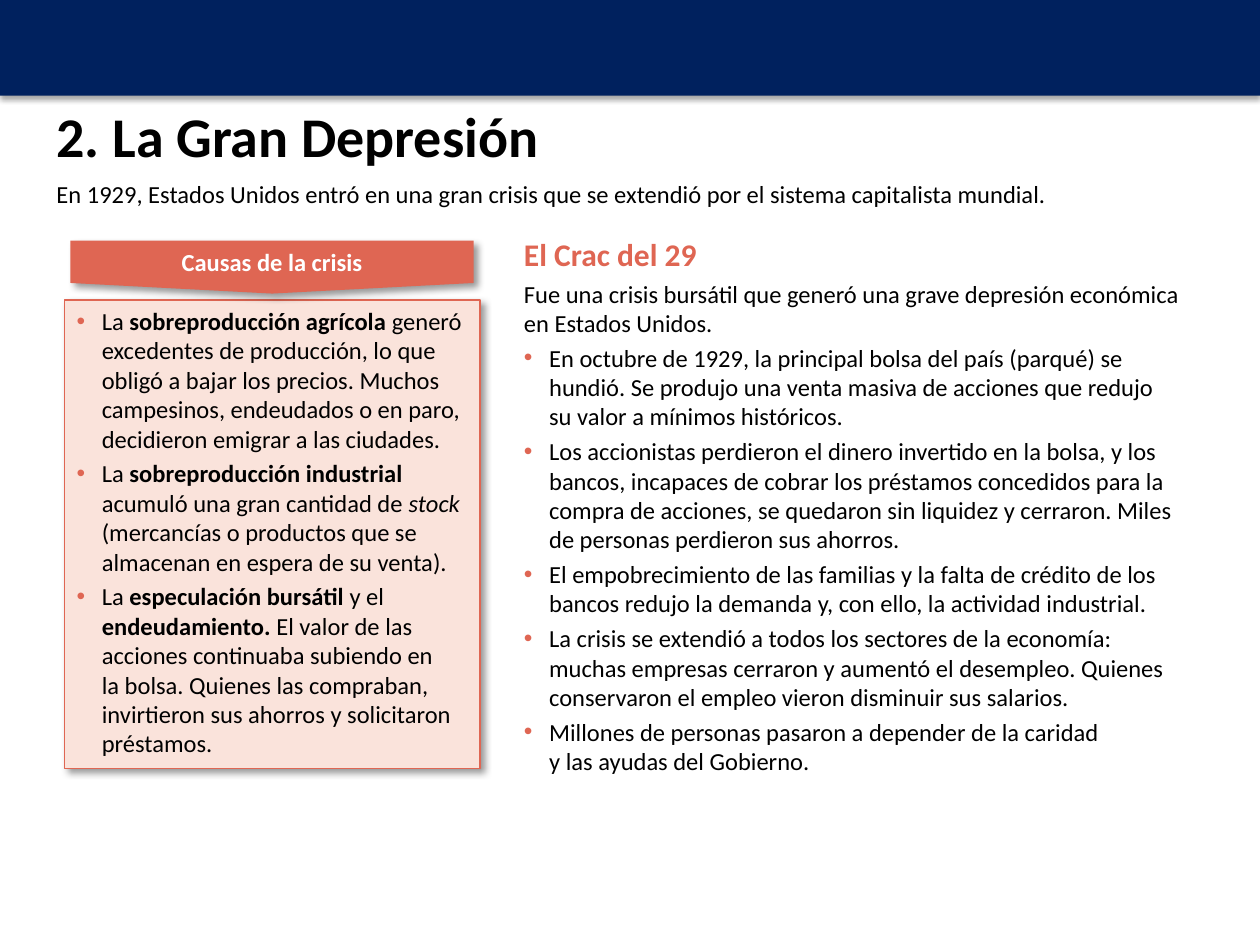
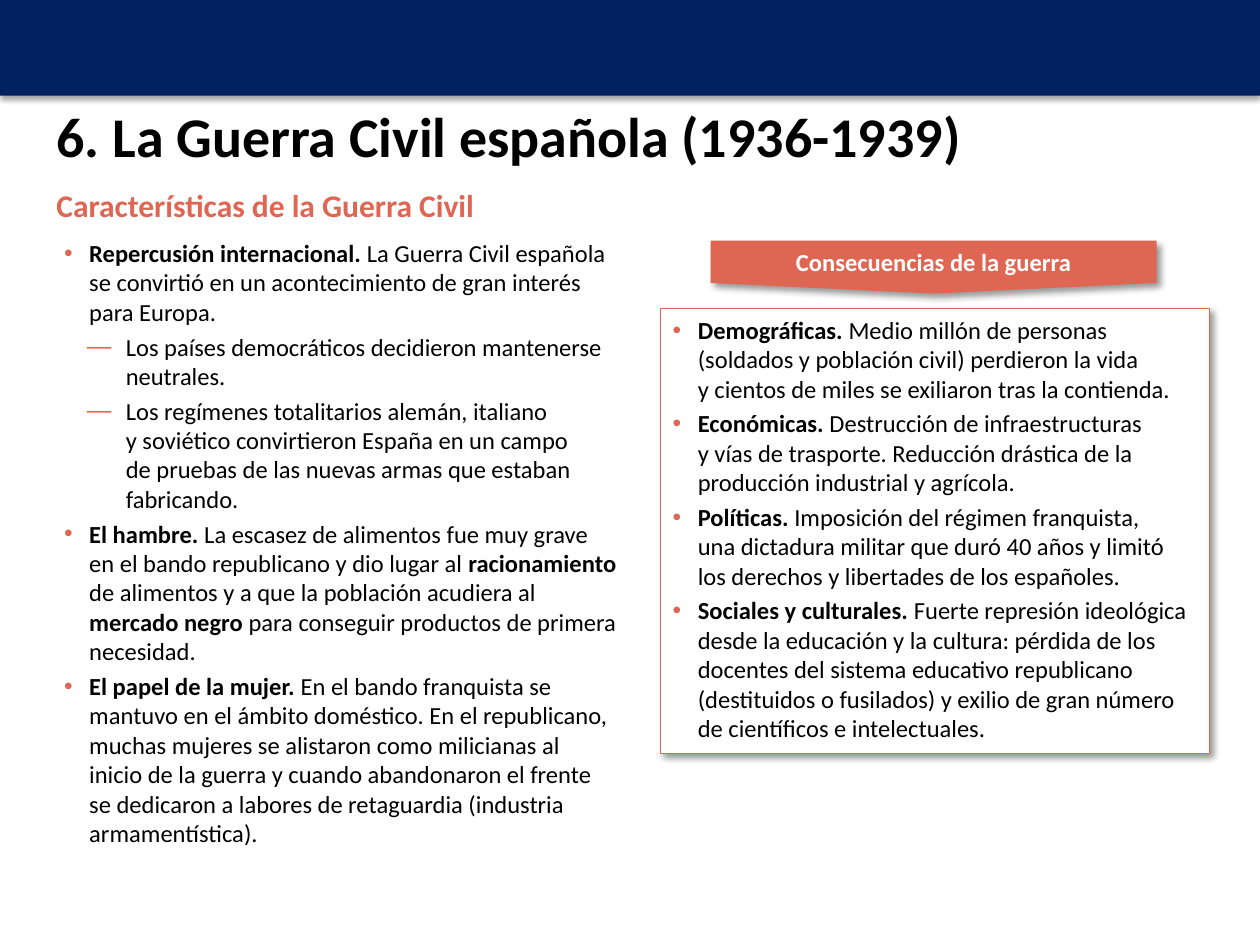
from dataclasses import dataclass
from typing import NamedTuple, Optional

from lxml.etree import SubElement as Sub
from pptx import Presentation
from pptx.dml.color import RGBColor as Rgb
from pptx.enum.shapes import MSO_SHAPE as Kind
from pptx.enum.text import MSO_ANCHOR as Anchor, MSO_AUTO_SIZE as Fit, PP_ALIGN as Align
from pptx.oxml.ns import qn
from pptx.util import Emu, Inches, Pt


@dataclass(frozen=True)
class Theme:
    font: str = "Calibri"
    navy: str = "00215E"
    coral: str = "DF6653"
    blush: str = "FAE3DB"
    white: str = "FFFFFF"
    black: str = "000000"
    title: int = 32
    head: int = 18
    body: int = 14
    gap: int = 3
    rule: float = 0.75


class Box(NamedTuple):
    col: float
    row: float
    cols: float
    rows: float


class Shade(NamedTuple):
    alpha: int
    blur: float
    dist: float
    angle: int


class Mark(NamedTuple):
    sign: str
    left: float
    hang: float


class Style(NamedTuple):
    size: int
    color: str
    bold: bool = False
    after: int = 0
    mark: Optional[Mark] = None
    align: Align = Align.LEFT


class Para(NamedTuple):
    text: str
    style: Style


class Panel(NamedTuple):
    box: Box
    fill: str
    paras: list[Para]
    tag: Box
    label: str


class Note(NamedTuple):
    box: Box
    paras: list[Para]


class Page(NamedTuple):
    title: str
    rows: float
    notes: list[Note]
    panel: Panel


T = Theme()
COLS, ROWS = 100, 75
WIDE, HIGH = Inches(10), Inches(7.5)
EDGE = 3.5
BAND = Box(0, 0, COLS, 7.6)
TAG_ROW, TAG_ROWS = 19.1, 4.2

SOFT = Shade(35, 3.1, 1.8, 90)
DROP = Shade(40, 4, 3, 45)

TITLE = Style(T.title, T.black, True)
HEAD = Style(T.head, T.coral, True, T.gap)
PLAIN = Style(T.body, T.black, after=T.gap)
DOT = PLAIN._replace(mark=Mark("•", 0.2, 0.2))
DASH = PLAIN._replace(mark=Mark("—", 0.49, 0.31))
LABEL = Style(T.body, T.white, True, align=Align.CENTER)


def place(box: Box) -> tuple[Emu, Emu, Emu, Emu]:
    x, y = WIDE / COLS, HIGH / ROWS
    return (Emu(round(box.col * x)), Emu(round(box.row * y)),
            Emu(round(box.cols * x)), Emu(round(box.rows * y)))


def set_mark(para, mark: Mark) -> None:
    props = para._p.get_or_add_pPr()
    props.set("marL", str(Inches(mark.left)))
    props.set("indent", str(-Inches(mark.hang)))
    tint = Sub(props, qn("a:buClr"))
    Sub(tint, qn("a:srgbClr"), val=T.coral)
    Sub(props, qn("a:buFont"), typeface="Arial")
    Sub(props, qn("a:buChar"), char=mark.sign)


def add_run(para, text: str, style: Style, bold: bool, slant: bool) -> None:
    for i, line in enumerate(text.split("\n")):
        if i:
            para.add_line_break()
        if line:
            run = para.add_run()
            run.text = line
            font = run.font
            font.name, font.size = T.font, Pt(style.size)
            font.bold, font.italic = bold, slant
            font.color.rgb = Rgb.from_string(style.color)


def write(shape, paras: list[Para], anchor: Anchor = Anchor.TOP, fit: Fit = Fit.SHAPE_TO_FIT_TEXT) -> None:
    frame = shape.text_frame
    frame.word_wrap = True
    frame.auto_size = fit
    frame.vertical_anchor = anchor
    for i, (text, style) in enumerate(paras):
        para = frame.add_paragraph() if i else frame.paragraphs[0]
        if style.mark:
            set_mark(para, style.mark)
        para.alignment = style.align
        para.space_after = Pt(style.after)
        for j, chunk in enumerate(text.split("*")):
            for k, part in enumerate(chunk.split("_")):
                add_run(para, part, style, style.bold or j % 2 == 1, k % 2 == 1)


def add_text(slide, box: Box, paras: list[Para], fit: Fit = Fit.SHAPE_TO_FIT_TEXT) -> None:
    write(slide.shapes.add_textbox(*place(box)), paras, fit=fit)


def add_block(slide, kind: Kind, box: Box, fill: str, shade: Shade, line: Optional[str] = None):
    shape = slide.shapes.add_shape(kind, *place(box))
    shape.fill.solid()
    shape.fill.fore_color.rgb = Rgb.from_string(fill)
    if line:
        shape.line.color.rgb = Rgb.from_string(line)
        shape.line.width = Pt(T.rule)
    else:
        shape.line.fill.background()
    shape.shadow.inherit = False
    cast = Sub(shape.element.spPr.find(qn("a:effectLst")), qn("a:outerShdw"),
               blurRad=str(Pt(shade.blur)), dist=str(Pt(shade.dist)),
               dir=str(shade.angle * 60000), algn="t", rotWithShape="0")
    tint = Sub(cast, qn("a:srgbClr"), val=T.black)
    Sub(tint, qn("a:alpha"), val=str(shade.alpha * 1000))
    return shape


def add_panel(slide, panel: Panel) -> None:
    body = add_block(slide, Kind.RECTANGLE, panel.box, panel.fill, DROP, T.coral)
    write(body, panel.paras)
    tag = add_block(slide, Kind.FLOWCHART_OFFPAGE_CONNECTOR, panel.tag, T.coral, DROP)
    write(tag, [Para(panel.label, LABEL)], Anchor.MIDDLE)


def add_page(deck, page: Page) -> None:
    slide = deck.slides.add_slide(deck.slide_layouts[6])
    add_block(slide, Kind.RECTANGLE, BAND, T.navy, SOFT)
    add_text(slide, Box(EDGE, BAND.rows, 88.2, page.rows), [Para(page.title, TITLE)], Fit.NONE)
    for note in page.notes:
        add_text(slide, note.box, note.paras)
    add_panel(slide, page.panel)


def dots(*texts: str) -> list[Para]:
    return [Para(text, DOT) for text in texts]


CRASH = Page(
    "2. La Gran Depresión", 7.1,
    [
        Note(Box(EDGE, 13.7, 90.6, 3.4), [
            Para("En 1929, Estados Unidos entró en una gran crisis que se extendió por el sistema capitalista mundial.", PLAIN),
        ]),
        Note(Box(40.6, 18.2, 55.1, 44.3), [
            Para("El Crac del 29", HEAD),
            Para("Fue una crisis bursátil que generó una grave depresión económica en Estados Unidos.", PLAIN),
            *dots(
                "En octubre de 1929, la principal bolsa del país (parqué) se hundió. Se produjo una venta masiva "
                "de acciones que redujo \nsu valor a mínimos históricos.",
                "Los accionistas perdieron el dinero invertido en la bolsa, y los bancos, incapaces de cobrar los "
                "préstamos concedidos para la compra de acciones, se quedaron sin liquidez y cerraron. Miles \n"
                "de personas perdieron sus ahorros.",
                "El empobrecimiento de las familias y la falta de crédito de los bancos redujo la demanda y, "
                "con ello, la actividad industrial.",
                "La crisis se extendió a todos los sectores de la economía: muchas empresas cerraron y aumentó "
                "el desempleo. Quienes conservaron el empleo vieron disminuir sus salarios.",
                "Millones de personas pasaron a depender de la caridad \ny las ayudas del Gobierno.",
            ),
        ]),
    ],
    Panel(
        Box(5.1, 23.8, 33, 37.2), T.blush,
        dots(
            "La* sobreproducción agrícola *generó excedentes de producción, lo que obligó a bajar los precios. "
            "Muchos campesinos, endeudados o en paro, decidieron emigrar a las ciudades.",
            "La *sobreproducción industrial *acumuló una gran cantidad de _stock _(mercancías o productos que "
            "se almacenan en espera de su venta).",
            "La *especulación bursátil *y el *endeudamiento. *El valor de las acciones continuaba subiendo en \n"
            "la bolsa. Quienes las compraban, invirtieron sus ahorros y solicitaron préstamos.",
        ),
        Box(5.6, TAG_ROW, 32, TAG_ROWS), "Causas de la crisis",
    ),
)

WAR = Page(
    "6. La Guerra Civil española (1936-1939)", 5.5,
    [
        Note(Box(EDGE, 14.3, 65.4, 4), [Para("Características de la Guerra Civil", HEAD._replace(after=0))]),
        Note(Box(4.1, 18.4, 45.9, 49.8), [
            Para("*Repercusión internacional. *La Guerra Civil española se convirtió en un acontecimiento de "
                 "gran interés para Europa.", DOT),
            Para("Los países democráticos decidieron mantenerse neutrales.", DASH),
            Para("Los regímenes totalitarios alemán, italiano \ny soviético convirtieron España en un campo \n"
                 "de pruebas de las nuevas armas que estaban fabricando.", DASH),
            *dots(
                "*El hambre. *La escasez de alimentos fue muy grave en el bando republicano y dio lugar al "
                "*racionamiento* de alimentos y a que la población acudiera al *mercado negro *para conseguir "
                "productos de primera necesidad.",
                "*El papel de la mujer. *En el bando franquista se mantuvo en el ámbito doméstico. En el "
                "republicano, muchas mujeres se alistaron como milicianas al inicio de la guerra y cuando "
                "abandonaron el frente se dedicaron a labores de retaguardia (industria armamentística).",
            ),
        ]),
    ],
    Panel(
        Box(52.4, 24.5, 43.6, 35.3), T.white,
        dots(
            "*Demográficas. *Medio millón de personas (soldados y población civil) perdieron la vida \n"
            "y cientos de miles se exiliaron tras la contienda.",
            "*Económicas. *Destrucción de infraestructuras \ny vías de trasporte. Reducción drástica de la "
            "producción industrial y agrícola.",
            "*Políticas. *Imposición del régimen franquista, \nuna dictadura militar que duró 40 años y limitó \n"
            "los derechos y libertades de los españoles.",
            "*Sociales y culturales. *Fuerte represión ideológica desde la educación y la cultura: pérdida de "
            "los docentes del sistema educativo republicano (destituidos o fusilados) y exilio de gran número \n"
            "de científicos e intelectuales.",
        ),
        Box(56.4, TAG_ROW, 35.4, TAG_ROWS), "Consecuencias de la guerra",
    ),
)


def main() -> None:
    deck = Presentation()
    deck.slide_width, deck.slide_height = WIDE, HIGH
    for page in (CRASH, WAR):
        add_page(deck, page)
    deck.save("out.pptx")


if __name__ == "__main__":
    main()
